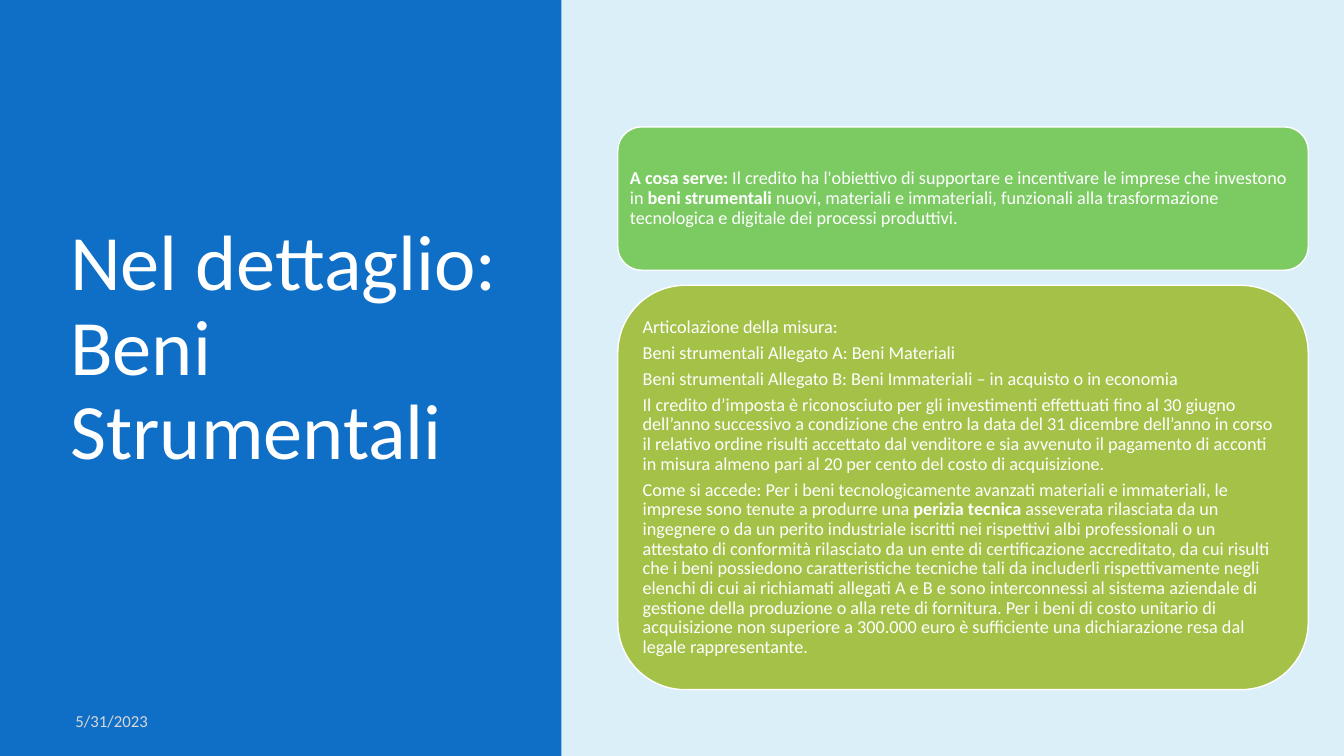
from dataclasses import dataclass
from typing import Any

from pptx import Presentation
from pptx.dml.color import RGBColor
from pptx.enum.shapes import MSO_SHAPE
from pptx.enum.text import MSO_ANCHOR, MSO_AUTO_SIZE, PP_ALIGN
from pptx.util import Cm, Pt


@dataclass(frozen=True)
class Theme:
    font: str = "Calibri"
    background: RGBColor = RGBColor(0xDB, 0xEF, 0xF9)
    panel: RGBColor = RGBColor(0x0F, 0x6F, 0xC6)
    purpose: RGBColor = RGBColor(0x7C, 0xCA, 0x62)
    measure: RGBColor = RGBColor(0xA4, 0xC1, 0x48)
    light: RGBColor = RGBColor(0xFF, 0xFF, 0xFF)
    muted: RGBColor = RGBColor(0xD8, 0xD8, 0xD8)
    title_size: int = 56
    card_size: int = 13
    date_size: int = 12


@dataclass(frozen=True)
class Span:
    text: str
    bold: bool = False


@dataclass(frozen=True)
class Card:
    height: float
    fill: RGBColor
    paragraphs: list[list[Span]]


THEME = Theme()
SLIDE_WIDTH, SLIDE_HEIGHT = 33.87, 19.05
PANEL_WIDTH = 14.15
CARD_LEFT, CARD_TOP, CARD_WIDTH, CARD_GAP = 15.57, 3.2, 17.4, 0.38
CARD_MARGIN = 0.13

CARDS = [
    Card(3.61, THEME.purpose, [[
        Span("A cosa serve: ", True),
        Span("Il credito ha l'obiettivo di supportare e incentivare le imprese "
             "che investono in "),
        Span("beni strumentali", True),
        Span(" nuovi, materiali e immateriali, funzionali alla trasformazione "
             "tecnologica e digitale dei processi produttivi."),
    ]]),
    Card(10.19, THEME.measure, [
        [Span("Articolazione della misura:")],
        [Span("Beni strumentali Allegato A: Beni Materiali")],
        [Span("Beni strumentali Allegato B: Beni Immateriali – in acquisto o in economia")],
        [Span("Il credito d’imposta è riconosciuto per gli investimenti effettuati "
              "fino al 30 giugno dell’anno successivo a condizione che entro la data "
              "del 31 dicembre dell’anno in corso il relativo ordine risulti accettato "
              "dal venditore e sia avvenuto il pagamento di acconti in misura almeno "
              "pari al 20 per cento del costo di acquisizione.")],
        [Span("Come si accede: Per i beni tecnologicamente avanzati materiali e "
              "immateriali, le imprese sono tenute a produrre una "),
         Span("perizia tecnica", True),
         Span(" asseverata rilasciata da un ingegnere o da un perito industriale "
              "iscritti nei rispettivi albi professionali o un attestato di conformità "
              "rilasciato da un ente di certificazione accreditato, da cui risulti che "
              "i beni possiedono caratteristiche tecniche tali da includerli "
              "rispettivamente negli elenchi di cui ai richiamati allegati A e B e sono "
              "interconnessi al sistema aziendale di gestione della produzione o alla "
              "rete di fornitura. Per i beni di costo unitario di acquisizione non "
              "superiore a 300.000 euro è sufficiente una dichiarazione resa dal legale "
              "rappresentante.")],
    ]),
]


def set_format(target: Any, values: dict[str, Any]) -> None:
    for name, value in values.items():
        setattr(target, name, value)


def set_font(font: Any, size: int, color: RGBColor, bold: bool = False) -> None:
    set_format(font, {"name": THEME.font, "size": Pt(size), "bold": bold})
    font.color.rgb = color


def set_frame(frame: Any) -> None:
    """Wrap text at a fixed size, centred vertically."""
    set_format(frame, {"word_wrap": True, "auto_size": MSO_AUTO_SIZE.NONE,
                       "vertical_anchor": MSO_ANCHOR.MIDDLE})


def add_panel(slide: Any) -> None:
    """Add the coloured left side behind every other element."""
    panel = slide.shapes.add_shape(MSO_SHAPE.RECTANGLE, 0, 0,
                                   Cm(PANEL_WIDTH), Cm(SLIDE_HEIGHT))
    panel.shadow.inherit = False
    panel.fill.solid()
    panel.fill.fore_color.rgb = THEME.panel
    panel.line.fill.background()
    slide.shapes.title._element.addprevious(panel._element)


def fill_title(slide: Any) -> None:
    title = slide.shapes.title
    set_format(title, {"left": Cm(1.52), "top": Cm(1.17),
                       "width": Cm(11.56), "height": Cm(15.29)})
    set_frame(title.text_frame)
    heading = title.text_frame.paragraphs[0]
    heading.text = "Nel dettaglio:\vBeni Strumentali"
    set_format(heading, {"alignment": PP_ALIGN.LEFT, "line_spacing": 0.9})
    for run in heading.runs:
        set_font(run.font, THEME.title_size, THEME.light)


def add_date(slide: Any) -> None:
    date = slide.shapes.add_textbox(Cm(1.65), Cm(17.65), Cm(7.62), Cm(1.02))
    set_frame(date.text_frame)
    day = date.text_frame.paragraphs[0].add_run()
    day.text = "5/31/2023"
    set_font(day.font, THEME.date_size, THEME.muted)


def add_card(slide: Any, card: Card, top: float) -> None:
    box = slide.shapes.add_shape(MSO_SHAPE.ROUNDED_RECTANGLE, Cm(CARD_LEFT), Cm(top),
                                 Cm(CARD_WIDTH), Cm(card.height))
    box.shadow.inherit = False
    box.fill.solid()
    box.fill.fore_color.rgb = card.fill
    box.line.color.rgb = THEME.light
    box.line.width = Pt(1)
    frame = box.text_frame
    set_frame(frame)
    set_format(frame, {f"margin_{side}": Cm(CARD_MARGIN)
                       for side in ("left", "top", "right", "bottom")})
    for index, spans in enumerate(card.paragraphs):
        paragraph = frame.add_paragraph() if index else frame.paragraphs[0]
        set_format(paragraph, {"alignment": PP_ALIGN.LEFT, "line_spacing": 0.9,
                               "space_before": Pt(4.5 if index else 0)})
        for span in spans:
            run = paragraph.add_run()
            run.text = span.text
            set_font(run.font, THEME.card_size, THEME.light, span.bold)


def main() -> None:
    deck = Presentation()
    set_format(deck, {"slide_width": Cm(SLIDE_WIDTH), "slide_height": Cm(SLIDE_HEIGHT)})
    slide = deck.slides.add_slide(deck.slide_layouts.get_by_name("Title Only"))
    slide.background.fill.solid()
    slide.background.fill.fore_color.rgb = THEME.background
    add_panel(slide)
    fill_title(slide)
    add_date(slide)
    top = CARD_TOP
    for card in CARDS:
        add_card(slide, card, top)
        top += card.height + CARD_GAP
    deck.save("out.pptx")


if __name__ == "__main__":
    main()
